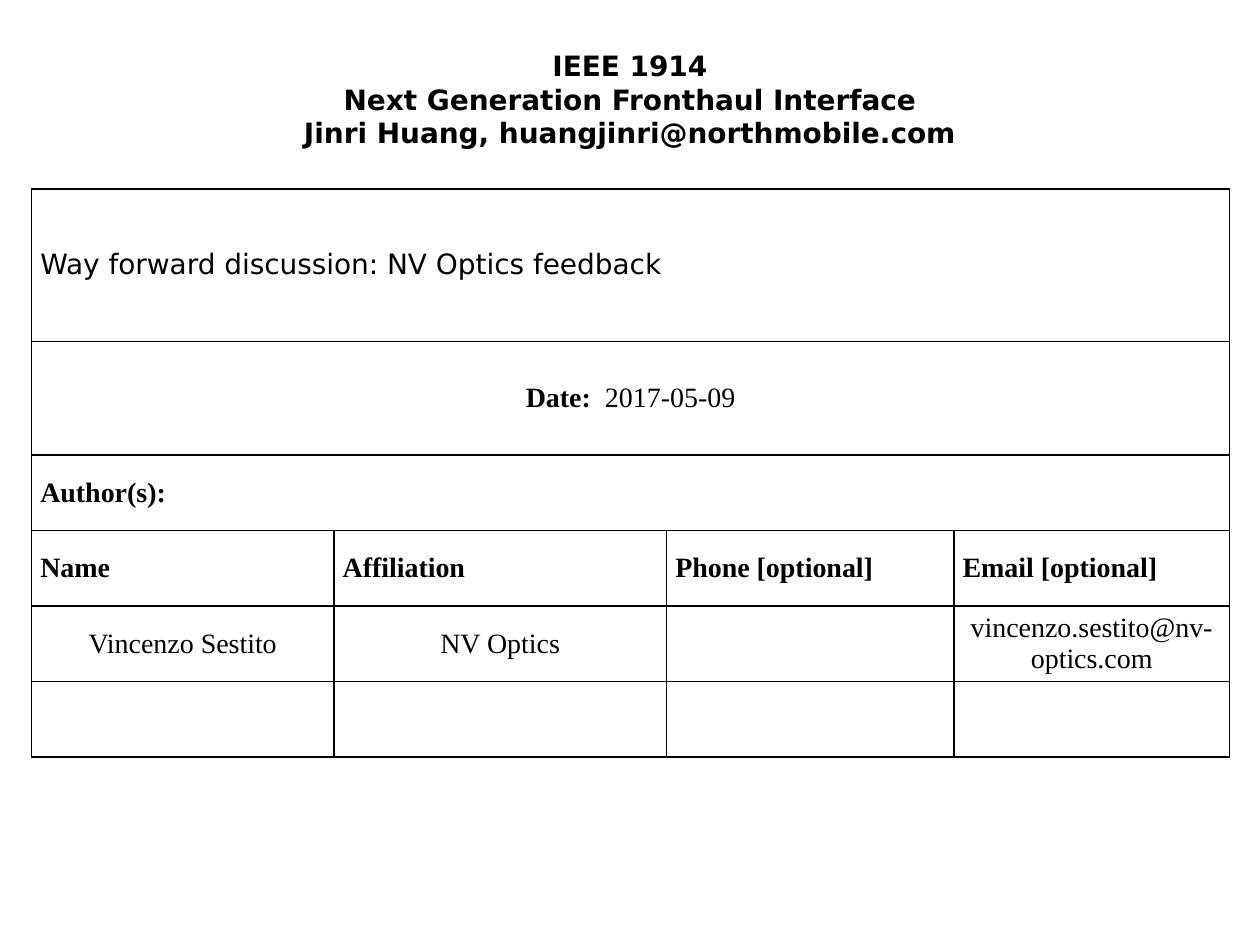
from lxml import etree
from pptx import Presentation
from pptx.dml.color import RGBColor
from pptx.enum.text import MSO_ANCHOR, MSO_AUTO_SIZE, PP_ALIGN
from pptx.oxml.ns import qn
from pptx.util import Inches, Pt

LEFT, CENTER = PP_ALIGN.LEFT, PP_ALIGN.CENTER
MIDDLE = MSO_ANCHOR.MIDDLE
GROW = MSO_AUTO_SIZE.SHAPE_TO_FIT_TEXT
BLANK_LAYOUT = 6

COLORS = {"text": "000000", "border": "000000"}
SANS, SERIF = "DejaVu Sans", "Times New Roman"
FONT_SIZE = 16

COLUMN_WIDTHS = [2.4, 2.64, 2.28, 2.19]
ROW_HEIGHTS = [1.21, 0.9, 0.6, 0.6, 0.6, 0.6]
FULL_WIDTH_ROWS = 3

TITLE_LINES = [
    "IEEE 1914",
    "Next Generation Fronthaul Interface",
    "Jinri Huang, huangjinri@northmobile.com",
]
HEADINGS = ["Name", "Affiliation", "Phone [optional]", "Email [optional]"]
AUTHOR = ["Vincenzo Sestito", "NV Optics", "", "vincenzo.sestito@nv-optics.com"]


def add_text(paragraph, text, font=SERIF, bold=False, align=LEFT):
    paragraph.alignment = align
    run = paragraph.add_run()
    run.text = text
    run.font.name = font
    run.font.size = Pt(FONT_SIZE)
    run.font.bold = bold
    run.font.color.rgb = RGBColor.from_string(COLORS["text"])


def add_title(slide):
    box = slide.shapes.add_textbox(Inches(2.27), Inches(0.33), Inches(5.46), Inches(0.91))
    frame = box.text_frame
    frame.word_wrap = False
    frame.auto_size = GROW
    frame.vertical_anchor = MIDDLE
    for index, line in enumerate(TITLE_LINES):
        paragraph = frame.add_paragraph() if index else frame.paragraphs[0]
        add_text(paragraph, line, font=SANS, bold=True, align=CENTER)


def set_borders(cell):
    properties = cell._tc.get_or_add_tcPr()
    for position, side in enumerate(("lnL", "lnR", "lnT", "lnB")):
        line = etree.Element(qn(f"a:{side}"), w=str(Pt(1)))
        fill = etree.SubElement(line, qn("a:solidFill"))
        etree.SubElement(fill, qn("a:srgbClr"), val=COLORS["border"])
        properties.insert(position, line)


def format_cell(cell):
    cell.fill.background()
    cell.vertical_anchor = MIDDLE
    cell.margin_left = cell.margin_right = Inches(0.07)
    cell.margin_top = cell.margin_bottom = 0
    set_borders(cell)


def add_grid(slide):
    frame = slide.shapes.add_table(
        len(ROW_HEIGHTS), len(COLUMN_WIDTHS),
        Inches(0.25), Inches(1.5), Inches(9.5), Inches(4.5))
    table = frame.table
    table.first_row = table.horz_banding = False
    for column, width in zip(table.columns, COLUMN_WIDTHS):
        column.width = Inches(width)
    for row, height in zip(table.rows, ROW_HEIGHTS):
        row.height = Inches(height)
    for cell in table.iter_cells():
        format_cell(cell)
    for row in range(FULL_WIDTH_ROWS):
        table.cell(row, 0).merge(table.cell(row, len(COLUMN_WIDTHS) - 1))
    return table


def fill_table(table):
    subject, date, authors = (
        table.cell(row, 0).text_frame.paragraphs[0] for row in range(FULL_WIDTH_ROWS))
    # Subject, date and author heading
    add_text(subject, "Way forward discussion: NV Optics feedback", font=SANS)
    add_text(date, "Date:  ", bold=True, align=CENTER)
    add_text(date, "2017-05-09", align=CENTER)
    date.space_after = Pt(12)
    add_text(authors, "Author(s):", bold=True)

    # Author list
    for column, (heading, value) in enumerate(zip(HEADINGS, AUTHOR)):
        add_text(table.cell(3, column).text_frame.paragraphs[0], heading, bold=True)
        if value:
            add_text(table.cell(4, column).text_frame.paragraphs[0], value, align=CENTER)


def main():
    presentation = Presentation()
    presentation.slide_width = Inches(10)
    presentation.slide_height = Inches(7.5)
    slide = presentation.slides.add_slide(presentation.slide_layouts[BLANK_LAYOUT])
    fill_table(add_grid(slide))
    add_title(slide)
    presentation.save("out.pptx")


if __name__ == "__main__":
    main()
